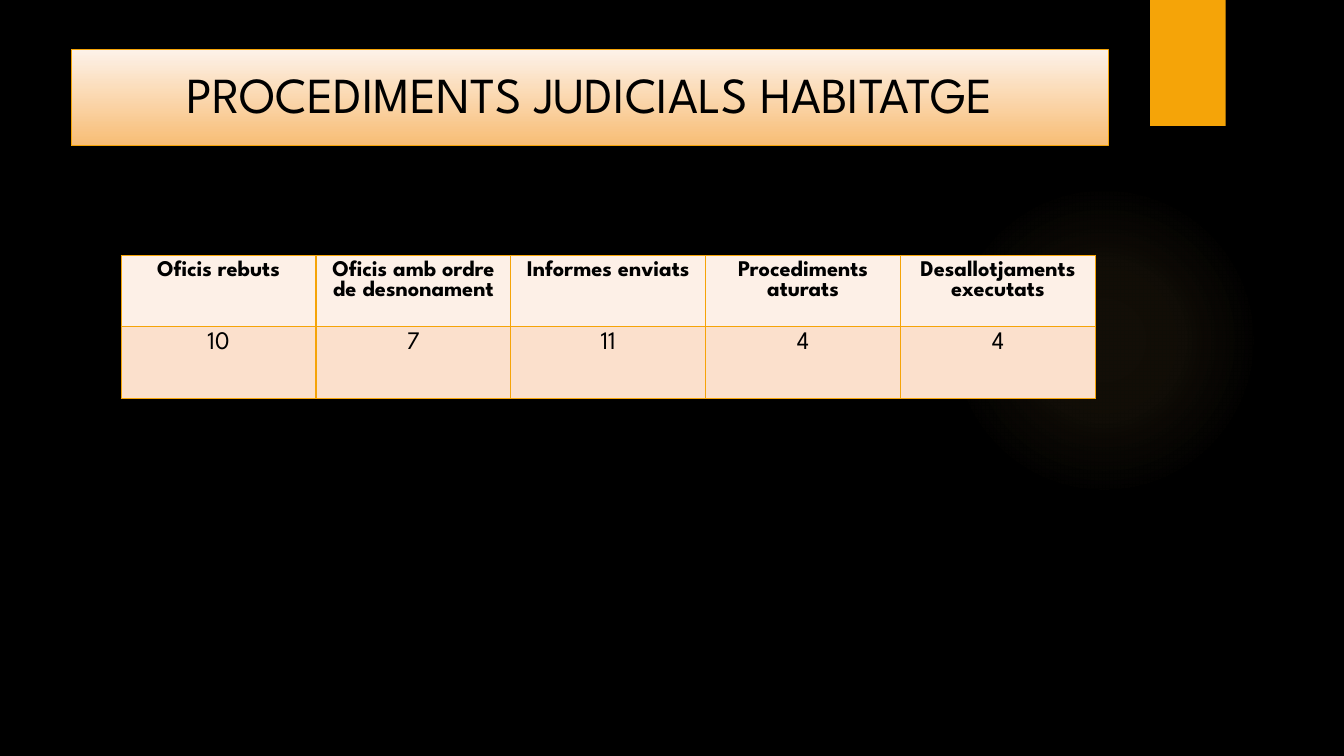
from dataclasses import dataclass

from lxml.etree import SubElement
from pptx import Presentation
from pptx.dml.color import RGBColor
from pptx.enum.shapes import MSO_SHAPE
from pptx.enum.text import MSO_ANCHOR, PP_ALIGN
from pptx.oxml import parse_xml
from pptx.oxml.ns import nsdecls, qn
from pptx.util import Pt


@dataclass(frozen=True)
class Theme:
    font: str = "League Spartan"
    background: str = "000000"
    text: str = "000000"
    accent: str = "F5A408"
    glow: str = "FAC96A"
    title_top: str = "FDF2E9"
    title_bottom: str = "F8BD75"
    header_fill: str = "FDF0E7"
    value_fill: str = "FBE0CC"
    title_size: int = 36
    header_size: int = 16
    value_size: int = 18


THEME = Theme()
HEADERS = ["Oficis rebuts", "Oficis amb ordre de desnonament", "Informes enviats",
           "Procediments aturats", "Desallotjaments executats"]
VALUES = ["10", "7", "11", "4", "4"]


def rgb(color):
    return RGBColor.from_string(color)


def write_text(frame, text, size, bold=False):
    paragraph = frame.paragraphs[0]
    paragraph.alignment = PP_ALIGN.CENTER
    run = paragraph.add_run()
    run.text = text
    formats = {"name": THEME.font, "size": Pt(size), "bold": bold}
    for attribute, value in formats.items():
        setattr(run.font, attribute, value)
    run.font.color.rgb = rgb(THEME.text)
    return paragraph


def add_block(slide, kind, left, top, width, height):
    block = slide.shapes.add_shape(kind, Pt(left), Pt(top), Pt(width), Pt(height))
    block.shadow.inherit = False
    block.line.fill.background()
    return block


def add_glow(slide):
    glow = add_block(slide, MSO_SHAPE.OVAL, 677.5, 131.8, 221.8, 221.8)
    stops = "".join(
        f'<a:gs pos="{position * 1000}"><a:srgbClr val="{THEME.glow}">'
        f'<a:alpha val="{alpha * 1000}"/></a:srgbClr></a:gs>'
        for position, alpha in [(0, 7), (36, 6), (69, 0)])
    gradient = parse_xml(
        f'<a:gradFill {nsdecls("a")}><a:gsLst>{stops}</a:gsLst><a:path path="circle">'
        '<a:fillToRect l="50000" t="50000" r="50000" b="50000"/></a:path></a:gradFill>')
    glow._element.spPr.find(qn("a:prstGeom")).addnext(gradient)


def add_tab(slide):
    tab = add_block(slide, MSO_SHAPE.RECTANGLE, 821.5, 0, 54, 90)
    tab.fill.solid()
    tab.fill.fore_color.rgb = rgb(THEME.accent)


def add_title(slide, text):
    title = add_block(slide, MSO_SHAPE.RECTANGLE, 51, 35.5, 740.5, 68.5)
    title.fill.gradient()
    title.fill.gradient_angle = 270
    for stop, color in zip(title.fill.gradient_stops,
                           [THEME.title_top, THEME.title_bottom]):
        stop.color.rgb = rgb(color)
    title.line.color.rgb = rgb(THEME.accent)
    title.line.width = Pt(0.75)
    title.text_frame.word_wrap = True
    title.text_frame.vertical_anchor = MSO_ANCHOR.MIDDLE
    write_text(title.text_frame, text, THEME.title_size).line_spacing = 0.9


def style_cell(cell, color):
    properties = cell._tc.get_or_add_tcPr()
    for side in ("lnL", "lnR", "lnT", "lnB"):
        border = SubElement(properties, qn(f"a:{side}"), w=str(Pt(1)))
        solid = SubElement(border, qn("a:solidFill"))
        SubElement(solid, qn("a:srgbClr"), val=THEME.accent)
    cell.fill.solid()
    cell.fill.fore_color.rgb = rgb(color)


def add_case_table(slide):
    rows = [(HEADERS, THEME.header_size, True, THEME.header_fill),
            (VALUES, THEME.value_size, False, THEME.value_fill)]
    table = slide.shapes.add_table(len(rows), len(HEADERS), Pt(86.5), Pt(182.5),
                                   Pt(696), Pt(102)).table
    for row_index, (texts, size, bold, color) in enumerate(rows):
        for column_index, text in enumerate(texts):
            cell = table.cell(row_index, column_index)
            style_cell(cell, color)
            write_text(cell.text_frame, text, size, bold)


def main():
    deck = Presentation()
    deck.slide_width, deck.slide_height = Pt(960), Pt(540)
    slide = deck.slides.add_slide(deck.slide_layouts[6])
    slide.background.fill.solid()
    slide.background.fill.fore_color.rgb = rgb(THEME.background)
    add_glow(slide)
    add_tab(slide)
    add_title(slide, "PROCEDIMENTS JUDICIALS HABITATGE")
    add_case_table(slide)
    deck.save("out.pptx")


if __name__ == "__main__":
    main()
